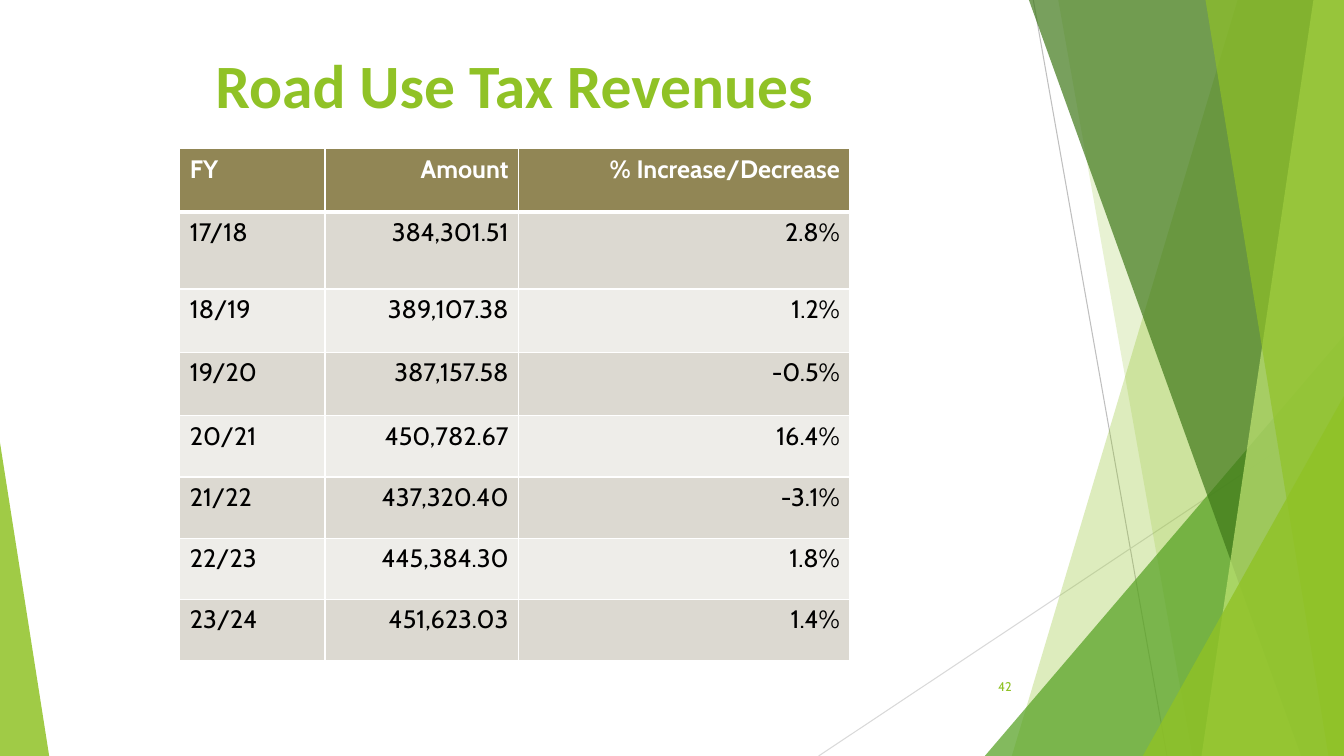
from lxml.etree import SubElement as Sub
from pptx import Presentation
from pptx.dml.color import RGBColor as RGB
from pptx.enum.shapes import MSO_CONNECTOR as LINK, MSO_SHAPE as SHAPE
from pptx.enum.text import MSO_ANCHOR as ANCHOR, MSO_AUTO_SIZE as AUTO, PP_ALIGN as ALIGN
from pptx.oxml.ns import qn
from pptx.util import Cm, Pt

WIDE, HIGH = 33.87, 19.05
HUE = {
    "lime": "90C226", "green": "54A021", "forest": "3F7819", "pale": "C0E474",
    "dark": "BFBFBF", "light": "D9D9D9", "head": "918655", "odd": "DCD9D1",
    "even": "EEEDE9", "white": "FFFFFF", "black": "000000",
}
ROWS = [
    ("FY", "Amount", "% Increase/Decrease"),
    ("17/18", "384,301.51", "2.8%"),
    ("18/19", "389,107.38", "1.2%"),
    ("19/20", "387,157.58", "-0.5%"),
    ("20/21", "450,782.67", "16.4%"),
    ("21/22", "437,320.40", "-3.1%"),
    ("22/23", "445,384.30", "1.8%"),
    ("23/24", "451,623.03", "1.4%"),
]
COLS = (3.66, 4.88, 8.35)
TALL = (1.6, 1.93, 1.6, 1.6, 1.54, 1.54, 1.54, 1.54)


def color(name):
    return RGB.from_string(HUE[name])


def write(frame, text, hue, align=ALIGN.LEFT, **style):
    frame.text = text
    para = frame.paragraphs[0]
    para.alignment = align
    font = para.runs[0].font
    for key, value in style.items():
        setattr(font, key, value)
    font.color.rgb = color(hue)


def tint(shape, hue, alpha):
    """Fill a shape with a see-through colour, without outline or shadow."""
    shape.shadow.inherit = False
    shape.line.fill.background()
    shape.fill.solid()
    shape.fill.fore_color.rgb = color(hue)
    tone = shape.fill._xPr.find(qn("a:solidFill"))[0]
    Sub(tone, qn("a:alpha"), val=str(alpha * 1000))


def add_ray(slide, start, end, hue):
    ray = slide.shapes.add_connector(LINK.STRAIGHT, *map(Cm, start + end))
    ray.line.color.rgb = color(hue)
    ray.line.width = Pt(0.75)
    Sub(ray._element.spPr, qn("a:effectLst"))


def add_wedge(slide, box, side, hue, alpha):
    """Add a right triangle whose peak is at side 0 (left) or 1 (right)."""
    wedge = slide.shapes.add_shape(SHAPE.ISOSCELES_TRIANGLE, *map(Cm, box))
    wedge.adjustments[0] = side
    tint(wedge, hue, alpha)


def add_facet(slide, box, top, base, hue, alpha):
    """Add a band from two points on the box's top and base to its right edge."""
    left, up, wide, high = box
    right, down = left + wide, up + high
    pen = slide.shapes.build_freeform(Cm(left + top), Cm(up))
    points = [(right, up), (right, down), (left + base, down)]
    pen.add_line_segments([(Cm(x), Cm(y)) for x, y in points], close=True)
    tint(pen.convert_to_shape(), hue, alpha)


def add_decor(slide, box):
    left, up, wide, high = box
    right, down = left + wide, up + high

    def wedge(x, y, hue, alpha):
        add_wedge(slide, (left + x, up + y, wide - x, high - y), 1, hue, alpha)

    add_ray(slide, (left + 5.41, up), (left + 8.78, down), "dark")
    add_ray(slide, (right, up + 10.24), (left, down), "light")
    add_facet(slide, box, 10.56, 4.87, "lime", 30)
    add_facet(slide, box, 6.04, 9.42, "lime", 20)
    wedge(4.19, 8.46, "green", 72)
    add_facet(slide, box, 5.3, 12.16, "forest", 70)
    add_facet(slide, box, 12.47, 9.65, "pale", 70)
    add_facet(slide, box, 9.75, 12.85, "lime", 65)
    wedge(8.17, 9.98, "lime", 80)


def set_title(slide, box, text):
    title = slide.shapes.title
    for key, value in zip(("left", "top", "width", "height"), box):
        setattr(title, key, Cm(value))
    frame = title.text_frame
    frame.word_wrap = True
    frame.auto_size = AUTO.NONE
    frame.vertical_anchor = ANCHOR.MIDDLE
    write(frame, text, "lime", ALIGN.CENTER, name="Calibri", size=Pt(44), bold=True)


def edge(cell, row):
    """Draw white cell borders, thick between the header and the body."""
    thick = {0: "lnB", 1: "lnT"}.get(row)
    for side in ("lnL", "lnR", "lnT", "lnB"):
        width = Pt(3 if side == thick else 1)
        line = Sub(cell._tc.get_or_add_tcPr(), qn("a:" + side), w=str(width))
        Sub(Sub(line, qn("a:solidFill")), qn("a:srgbClr"), val=HUE["white"])


def add_grid(slide, box):
    grid = slide.shapes.add_table(len(ROWS), len(COLS), *map(Cm, box)).table
    for col, width in zip(grid.columns, COLS):
        col.width = Cm(width)
    for row, height in zip(grid.rows, TALL):
        row.height = Cm(height)
    for r, texts in enumerate(ROWS):
        head = r == 0
        fill = "head" if head else ("even", "odd")[r % 2]
        for c, text in enumerate(texts):
            cell = grid.cell(r, c)
            edge(cell, r)
            cell.fill.solid()
            cell.fill.fore_color.rgb = color(fill)
            write(cell.text_frame, text, "white" if head else "black",
                  ALIGN.RIGHT if c else ALIGN.LEFT,
                  name="Cabin", size=Pt(18), bold=head)


def add_number(slide, box, text):
    frame = slide.shapes.add_textbox(*map(Cm, box)).text_frame
    frame.word_wrap = True
    frame.vertical_anchor = ANCHOR.MIDDLE
    write(frame, text, "lime", ALIGN.RIGHT, name="Cabin", size=Pt(9))


def main():
    deck = Presentation()
    deck.slide_width, deck.slide_height = Cm(WIDE), Cm(HIGH)
    slide = deck.slides.add_slide(deck.slide_layouts[5])
    add_decor(slide, (20.63, 0, WIDE - 20.63, HIGH))
    add_wedge(slide, (0, 11.15, 1.24, HIGH - 11.15), 0, "lime", 85)
    set_title(slide, (3.02, 1.07, 19.89, 2.11), "Road Use Tax Revenues")
    add_grid(slide, (4.53, 3.75, sum(COLS), sum(TALL)))
    add_number(slide, (23.85, 16.79, 1.9, 1.02), "42")
    deck.save("out.pptx")


if __name__ == "__main__":
    main()
